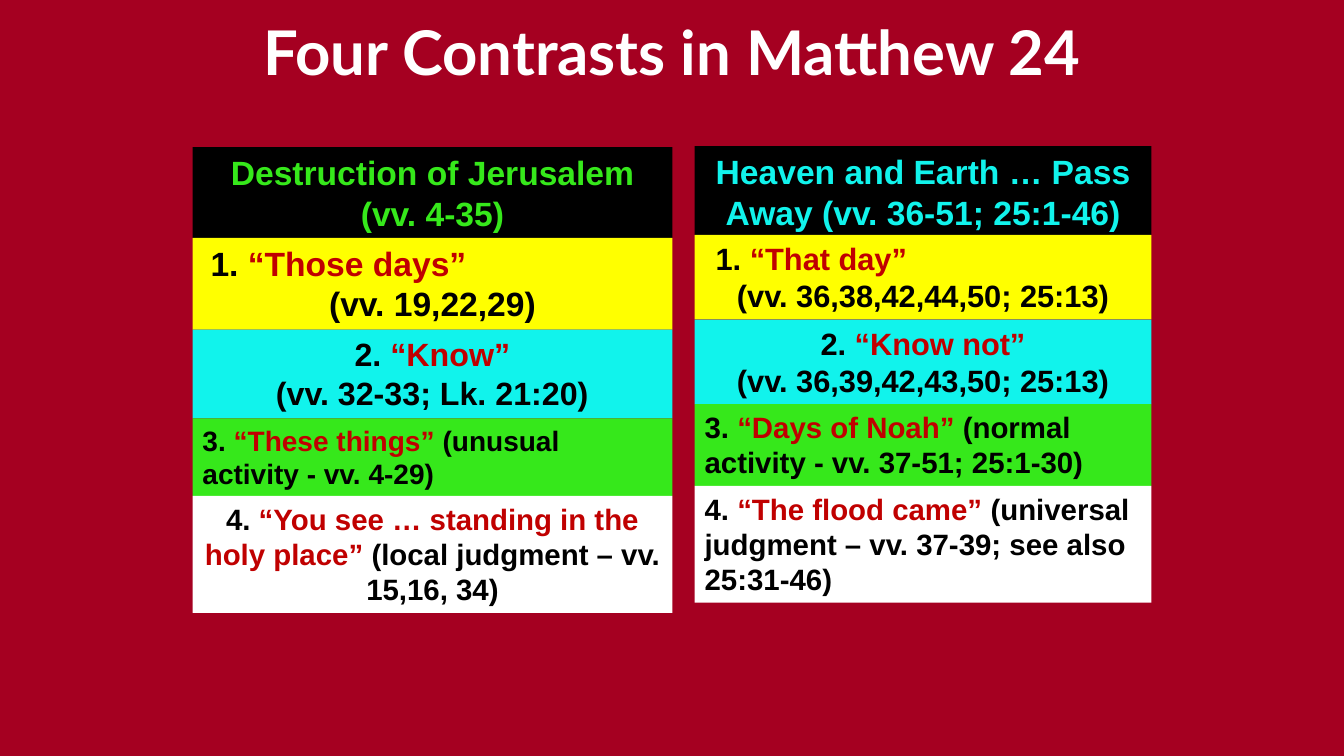
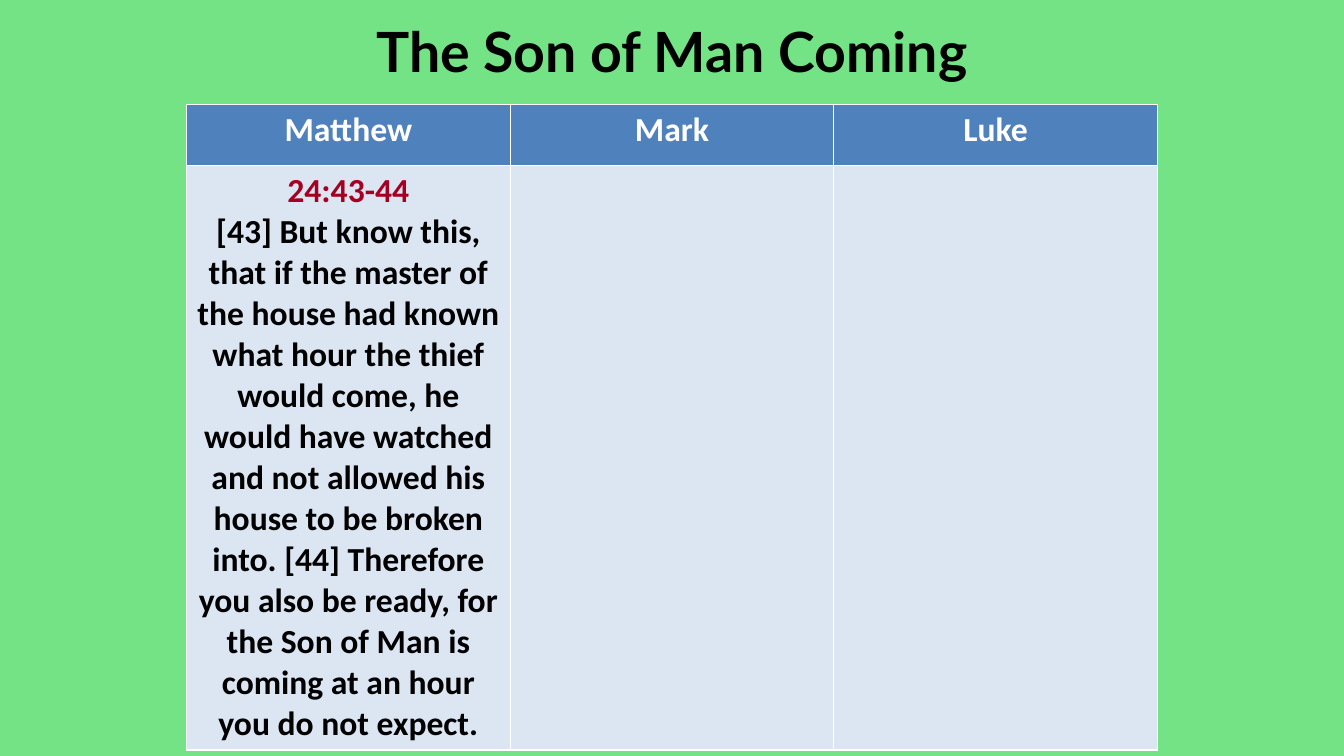
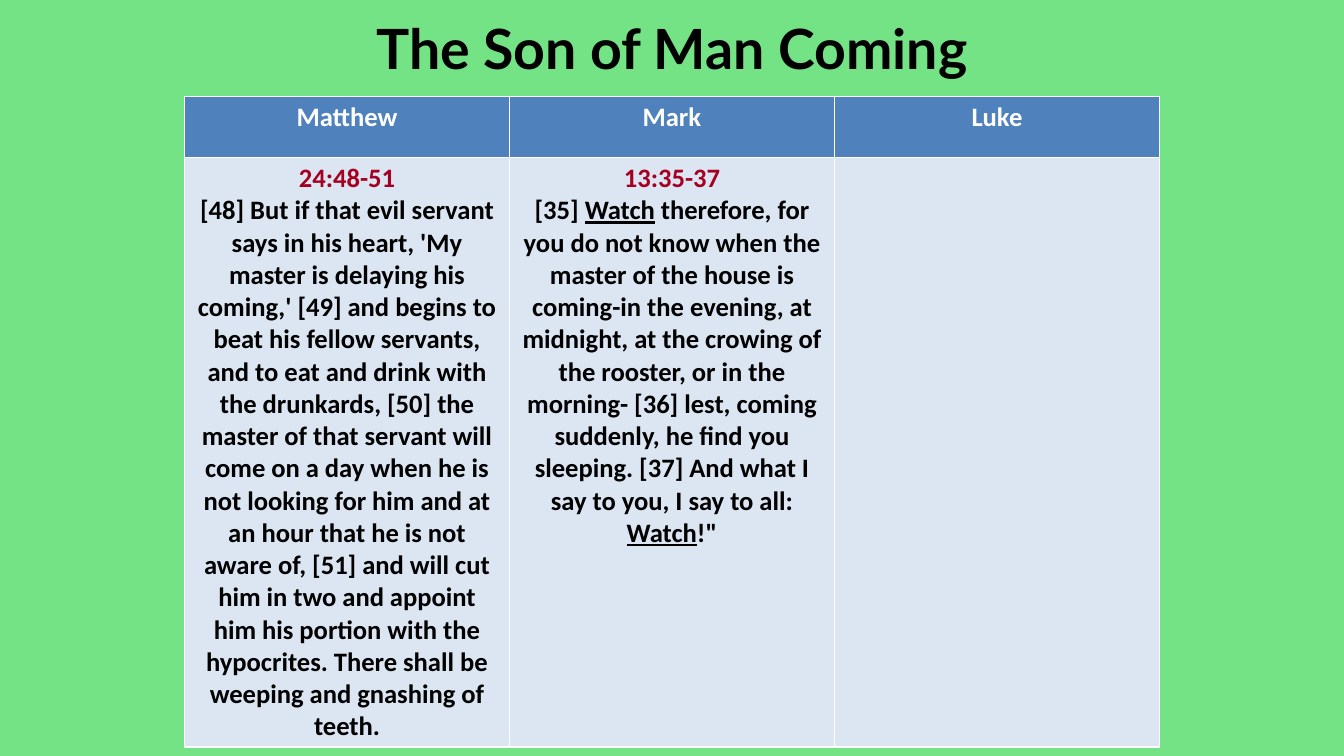
from itertools import accumulate
from pptx import Presentation
from pptx.dml.color import RGBColor
from pptx.enum import shapes, text
from pptx.oxml.ns import qn
from pptx.util import Inches, Pt
from lxml import etree

COLORS = dict(
    crimson="A50021", mint="73E386", black="000000", white="FFFFFF",
    yellow="FFFF00", cyan="11F3EC", green="36E81B", red="C00000",
    header="4F81BD", body="DCE6F2",
)
LEFT, CENTER = text.PP_ALIGN.LEFT, text.PP_ALIGN.CENTER
WIDTH, HEIGHT = 13.33, 7.5

# Content: a run is (words, colour) or (words, colour, underline)
BAND_FILLS = ["black", "yellow", "cyan", "green", "white"]
# Each band: height, text size, paragraphs of (alignment, indent, runs)
CONTRASTS = [
    dict(left=1.91, top=1.46, width=4.76, bands=[
        (0.9, 24, [(CENTER, 0, [("Destruction of Jerusalem (vv. 4-35)", "green")])]),
        (0.91, 24, [(LEFT, 0.08, [("1. ", "black"), ("“Those days”", "red")]),
                    (CENTER, 0, [("(vv. 19,22,29)", "black")])]),
        (0.88, 23, [(CENTER, 0, [("2. ", "black"), ("“Know”", "red")]),
                    (CENTER, 0, [("(vv. 32-33; Lk. 21:20)", "black")])]),
        (0.77, 20, [(LEFT, 0, [("3.", "black"), (" “These things” ", "red"),
                               ("(unusual activity - vv. 4-29)", "black")])]),
        (1.16, 21, [(CENTER, 0, [("4.", "black"),
                                 (" “You see … standing in the holy place” ", "red"),
                                 ("(local judgment – vv. 15,16, 34)", "black")])]),
    ]),
    dict(left=6.89, top=1.45, width=4.53, bands=[
        (0.88, 24, [(CENTER, 0, [("Heaven and Earth … Pass Away (vv. 36-51; 25:1-46)", "cyan")])]),
        (0.84, 22, [(LEFT, 0.11, [("1.", "black"), (" “That day”", "red")]),
                    (CENTER, 0, [("(vv. 36,38,42,44,50; 25:13)", "black")])]),
        (0.84, 22, [(CENTER, 0, [("2. ", "black"), ("“Know not”", "red")]),
                    (CENTER, 0, [("(vv. 36,39,42,43,50; 25:13)", "black")])]),
        (0.81, 21, [(LEFT, 0, [("3. ", "black"), ("“Days of Noah”", "red"),
                               (" (normal activity - vv. 37-51; 25:1-30)", "black")])]),
        (1.16, 21, [(LEFT, 0, [("4.", "black"), (" “The flood came” ", "red"),
                               ("(universal judgment – vv. 37-39; see also 25:31-46)", "black")])]),
    ]),
]

GOSPELS = ["Matthew", "Mark", "Luke"]
COMING = "The Son of Man Coming"
# Each passage: reference, runs of the verses
PASSAGES = [
    dict(title_height=0.71, left=1.85, top=1.04, rows=(0.6, 5.8), size=24, verses=[
        ("24:43-44", [("[43] But know this, that if the master of the house had known what hour the thief would come, he would have watched and not allowed his house to be broken into. [44] Therefore you also be ready, for the Son of Man is coming at an hour you do not expect.", "black")]),
    ]),
    dict(title_height=0.65, left=1.83, top=0.96, rows=(0.6, 5.85), size=19, verses=[
        ("24:48-51", [("[48] But if that evil servant says in his heart, 'My master is delaying his coming,' [49] and begins to beat his fellow servants, and to eat and drink with the drunkards, [50] the master of that servant will come on a day when he is not looking for him and at an hour that he is not aware of, [51] and will cut him in two and appoint him his portion with the hypocrites. There shall be weeping and gnashing of teeth.", "black")]),
        ("13:35-37", [("[35] ", "black"), ("Watch", "black", True),
                      (" therefore, for you do not know when the master of the house is coming-in the evening, at midnight, at the crowing of the rooster, or in the morning- [36] lest, coming suddenly, he find you sleeping. [37] And what I say to you, I say to all: ", "black"),
                      ("Watch", "black", True), ("!\"", "black")]),
    ]),
]


def rgb(name):
    return RGBColor.from_string(COLORS[name])


def write(tf, paragraphs, size, font):
    """Fill a text frame with bold paragraphs of (alignment, indent, runs)."""
    tf.word_wrap = True
    for i, (align, indent, runs) in enumerate(paragraphs):
        p = tf.add_paragraph() if i else tf.paragraphs[0]
        p.alignment = align
        if indent:
            p._p.get_or_add_pPr().set("marL", str(Inches(indent)))
        for words, color, *underline in runs:
            r = p.add_run()
            r.text = words
            style = dict(name=font, size=Pt(size), bold=True)
            if underline:
                style["underline"] = True
            for key, value in style.items():
                setattr(r.font, key, value)
            r.font.color.rgb = rgb(color)


def new_slide(prs, background, title, color, size, top, height):
    s = prs.slides.add_slide(prs.slide_layouts[6])
    s.background.fill.solid()
    s.background.fill.fore_color.rgb = rgb(background)
    width = 9
    box = s.shapes.add_textbox(Inches((WIDTH - width) / 2), Inches(top),
                               Inches(width), Inches(height))
    box.text_frame.vertical_anchor = text.MSO_ANCHOR.MIDDLE
    write(box.text_frame, [(CENTER, 0, [(title, color)])], size, "Lato")
    return s


def add_band(s, box, fill, paragraphs, size):
    sp = s.shapes.add_shape(shapes.MSO_SHAPE.RECTANGLE, *map(Inches, box))
    sp.shadow.inherit = False
    sp.fill.solid()
    sp.fill.fore_color.rgb = rgb(fill)
    sp.line.fill.background()
    sp.text_frame.vertical_anchor = text.MSO_ANCHOR.TOP
    write(sp.text_frame, paragraphs, size, "Arial")


def style_cell(cell, fill, bottom=1):
    """Flat fill and white borders."""
    cell.fill.solid()
    cell.fill.fore_color.rgb = rgb(fill)
    tcPr = cell._tc.get_or_add_tcPr()
    for i, (side, pt) in enumerate(dict(L=1, R=1, T=1, B=bottom).items()):
        ln = etree.Element(qn(f"a:ln{side}"), w=str(Pt(pt)))
        solid = etree.SubElement(ln, qn("a:solidFill"))
        etree.SubElement(solid, qn("a:srgbClr"), val=COLORS["white"])
        tcPr.insert(i, ln)


def add_passage_table(s, left, top, rows, size, verses):
    width = WIDTH - 2 * left
    table = s.shapes.add_table(2, len(GOSPELS), Inches(left), Inches(top),
                               Inches(width), Inches(sum(rows))).table
    for row, height in zip(table.rows, rows):
        row.height = Inches(height)
    for i, gospel in enumerate(GOSPELS):
        table.columns[i].width = Inches(width / len(GOSPELS))
        head, body = table.cell(0, i), table.cell(1, i)
        style_cell(head, "header")
        style_cell(body, "body")
        write(head.text_frame, [(CENTER, 0, [(gospel, "white")])], size, "Calibri")
        if i < len(verses):
            reference, runs = verses[i]
            write(body.text_frame, [(CENTER, 0, [(reference, "crimson")]),
                                    (CENTER, 0, runs)], size, "Calibri")


def main():
    prs = Presentation()
    prs.slide_width, prs.slide_height = Inches(WIDTH), Inches(HEIGHT)

    # Two columns of stacked bands
    s = new_slide(prs, "crimson", "Four Contrasts in Matthew 24", "white", 44, 0.19, 0.62)
    for column in CONTRASTS:
        heights = [band[0] for band in column["bands"]]
        tops = accumulate(heights, initial=column["top"])
        for top, fill, (height, size, paragraphs) in zip(tops, BAND_FILLS, column["bands"]):
            add_band(s, (column["left"], top, column["width"], height),
                     fill, paragraphs, size)

    # Parallel passages
    for passage in PASSAGES:
        s = new_slide(prs, "mint", COMING, "black", 39.6, 0.14, passage["title_height"])
        add_passage_table(s, *(passage[k] for k in ("left", "top", "rows", "size", "verses")))

    prs.save("out.pptx")


if __name__ == "__main__":
    main()
